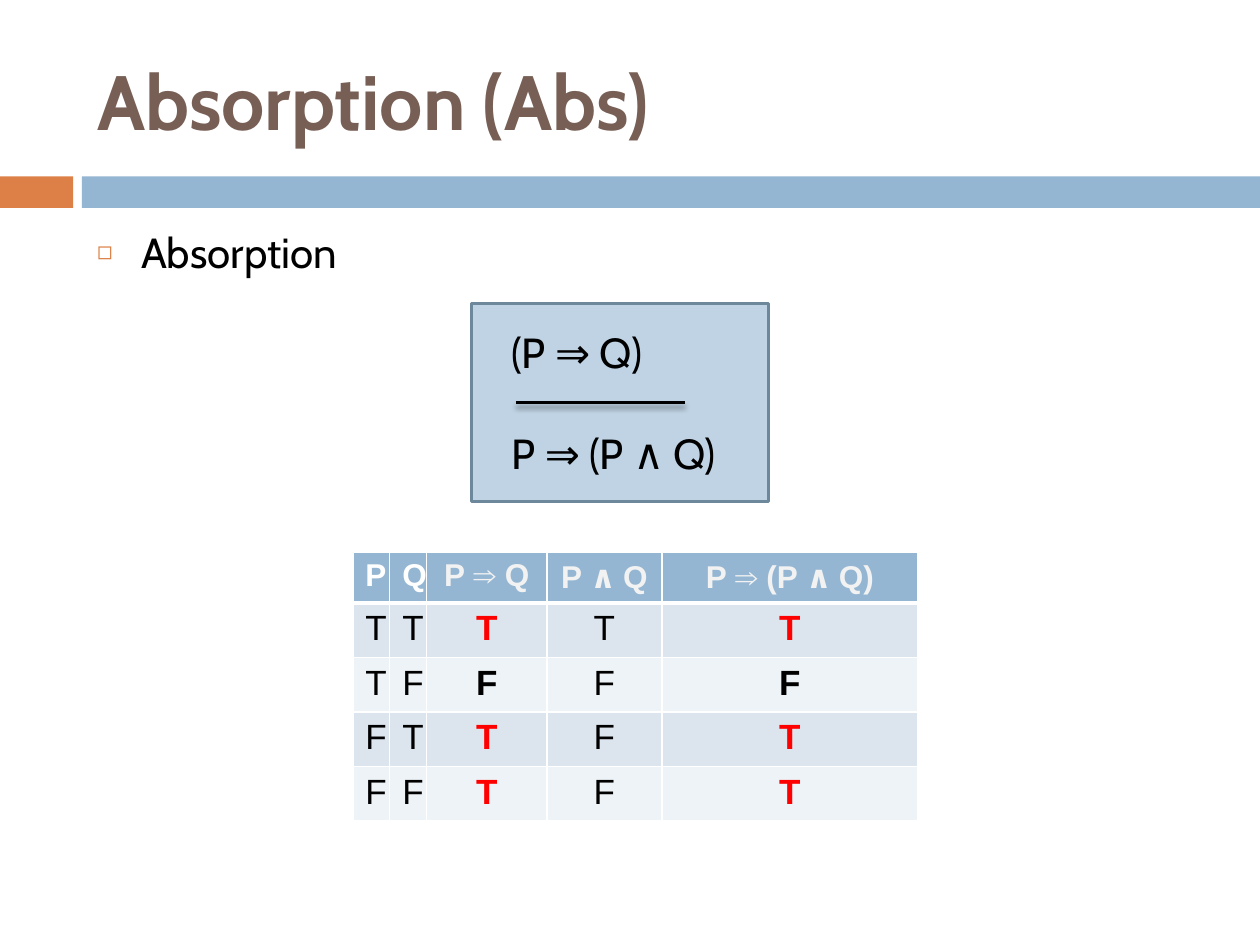
from dataclasses import dataclass

from lxml.etree import SubElement
from pptx import Presentation
from pptx.dml.color import RGBColor
from pptx.enum.shapes import MSO_CONNECTOR as CONN, MSO_SHAPE as SHAPE
from pptx.enum.text import MSO_ANCHOR as ANCHOR, PP_ALIGN as ALIGN
from pptx.oxml import parse_xml
from pptx.oxml.ns import nsdecls, qn
from pptx.util import Inches, Pt


@dataclass(frozen=True)
class Theme:
    font: str = "Cabin"
    table_font: str = "Arial"
    symbol_font: str = "Calibri"
    accent: str = "DD8047"
    blue: str = "94B6D2"
    title: str = "775F55"
    text: str = "000000"
    white: str = "FFFFFF"
    head_text: str = "F2F2F2"
    true_text: str = "FF0000"
    bands: tuple = ("DCE5EE", "EEF3F7")
    rule_fill: str = "BFD3E4"
    rule_line: str = "6D879B"
    title_size: int = 44
    body_size: int = 24
    head_size: int = 18
    cell_size: int = 20


T = Theme()
COLS, ROWS = 100, 75
UNIT = Inches(10) // COLS


def grid(*lengths):
    return [round(n * UNIT) for n in lengths]


def rgb(color):
    return RGBColor.from_string(color)


def add_run(p, text, size, color, font=T.font, bold=False):
    r = p.add_run()
    r.text = text
    r.font.size, r.font.name, r.font.bold = Pt(size), font, bold
    r.font.color.rgb = rgb(color)


def add_formula(p, text, size, color, font, bold=False):
    """Set a formula, with the conjunction sign in the symbol font."""
    before, sign, after = text.partition("∧ ")
    for part, face in ((before, font), (sign, T.symbol_font), (after, font)):
        if part:
            add_run(p, part, size, color, face, bold)


def add_rect(s, box, fill, line=None):
    sp = s.shapes.add_shape(SHAPE.RECTANGLE, *grid(*box))
    sp.shadow.inherit = False
    sp.fill.solid()
    sp.fill.fore_color.rgb = rgb(fill)
    if line:
        sp.line.color.rgb, sp.line.width = rgb(line), Pt(1.5)
    else:
        sp.line.fill.background()
    return sp


def add_band(s, box):
    x, y, w, h = box
    tab, gap = 5.8, 0.7
    add_rect(s, (x, y, tab, h), T.accent)
    add_rect(s, (x + tab + gap, y, w - tab - gap, h), T.blue)


def place(sp, box):
    sp.left, sp.top, sp.width, sp.height = grid(*box)
    return sp.text_frame


def fill_title(s, box, text):
    tf = place(s.shapes.title, box)
    tf.vertical_anchor = ANCHOR.MIDDLE
    p = tf.paragraphs[0]
    p.alignment = ALIGN.LEFT
    add_run(p, text, T.title_size, T.title, bold=True)


def fill_body(s, box, items):
    tf = place(s.placeholders[1], box)
    for i, item in enumerate(items):
        p = tf.add_paragraph() if i else tf.paragraphs[0]
        p.space_before = Pt(7)
        pPr = p._p.get_or_add_pPr()
        pPr.set("marL", str(Inches(0.35)))
        pPr.set("indent", str(-Inches(0.35)))
        SubElement(SubElement(pPr, qn("a:buClr")), qn("a:srgbClr"), val=T.accent)
        SubElement(pPr, qn("a:buSzPct"), val="60000")
        SubElement(pPr, qn("a:buChar"), char="◻")
        add_run(p, item, T.body_size, T.text)


def add_rule(s, box, premise, conclusion):
    """Draw an inference rule: premise, bar and conclusion in a box."""
    x, y, w, h = box
    tf = add_rect(s, box, T.rule_fill, T.rule_line).text_frame
    tf.vertical_anchor = ANCHOR.MIDDLE
    for i, text in enumerate((premise, conclusion)):
        p = tf.add_paragraph() if i else tf.paragraphs[0]
        p.alignment = ALIGN.LEFT
        p.space_before = Pt(29 * i)
        p._p.get_or_add_pPr().set("marL", str(Inches(0.22)))
        add_formula(p, text, T.body_size, T.text, T.font)

    mid = y + h / 2
    bar = s.shapes.add_connector(
        CONN.STRAIGHT, *grid(x + 0.15 * w, mid, x + 0.72 * w, mid))
    bar.line.color.rgb, bar.line.width = rgb(T.text), Pt(1.5)
    bar._element.spPr.append(parse_xml(
        f'<a:effectLst {nsdecls("a")}><a:outerShdw blurRad="{Pt(3)}" '
        f'dist="{Pt(2.4)}" dir="5400000" rotWithShape="0">'
        f'<a:srgbClr val="{T.text}"><a:alpha val="45000"/></a:srgbClr>'
        '</a:outerShdw></a:effectLst>'))


def style_cell(cell, fill, widths):
    """Fill a cell and give it white borders, left, right, top, bottom."""
    cell.fill.solid()
    cell.fill.fore_color.rgb = rgb(fill)
    tcPr = cell._tc.get_or_add_tcPr()
    for i, (side, width) in enumerate(zip("LRTB", widths)):
        tcPr.insert(i, parse_xml(
            f'<a:ln{side} {nsdecls("a")} w="{Pt(width)}"><a:solidFill>'
            f'<a:srgbClr val="{T.white}"/></a:solidFill></a:ln{side}>'))


def add_truth_table(s, box, widths, heads, rows):
    """Columns 2 and 4 hold the compared formulas, so they are bold."""
    table = s.shapes.add_table(len(rows) + 1, len(heads), *grid(*box)).table
    head_h = 3.9
    row_h = (box[3] - head_h) / len(rows)
    for col, width in zip(table.columns, grid(*widths)):
        col.width = width
    for i, values in enumerate([heads, *rows]):
        table.rows[i].height = grid(row_h if i else head_h)[0]
        for j, value in enumerate(values):
            cell = table.cell(i, j)
            p = cell.text_frame.paragraphs[0]
            p.alignment = ALIGN.CENTER
            if i == 0:
                style_cell(cell, T.blue, (1, 1, 1, 3))
                color = T.white if j < 2 else T.head_text
                add_formula(p, value, T.head_size, color, T.table_font, True)
            else:
                style_cell(cell, T.bands[(i - 1) % 2], (1, 1, 3 if i == 1 else 1, 1))
                compared = j in (2, 4)
                color = T.true_text if compared and value == "T" else T.text
                add_run(p, value, T.cell_size, color, T.table_font, compared)


def main():
    prs = Presentation()
    prs.slide_width, prs.slide_height = grid(COLS, ROWS)
    s = prs.slides.add_slide(prs.slide_layouts[1])
    add_band(s, (0, 14, COLS, 2.5))
    fill_title(s, (6.7, 2.5, 89.2, 10.8), "Absorption (Abs)")
    fill_body(s, (6.7, 17.5, 91.3, 55.4), ["Absorption"])
    add_truth_table(
        s, (28, 43.8, 44.9, 21.2), (2.93, 2.93, 9.55, 9.13, 20.3),
        ("P", "Q", "P ⇒ Q", "P ∧ Q", "P ⇒ (P ∧ Q)"),
        ("TTTTT", "TFFFF", "FTTFT", "FFTFT"))
    add_rule(s, (37.4, 24.1, 23.6, 15.7), "(P ⇒ Q)", "P ⇒ (P ∧ Q)")
    prs.save("out.pptx")


if __name__ == "__main__":
    main()
